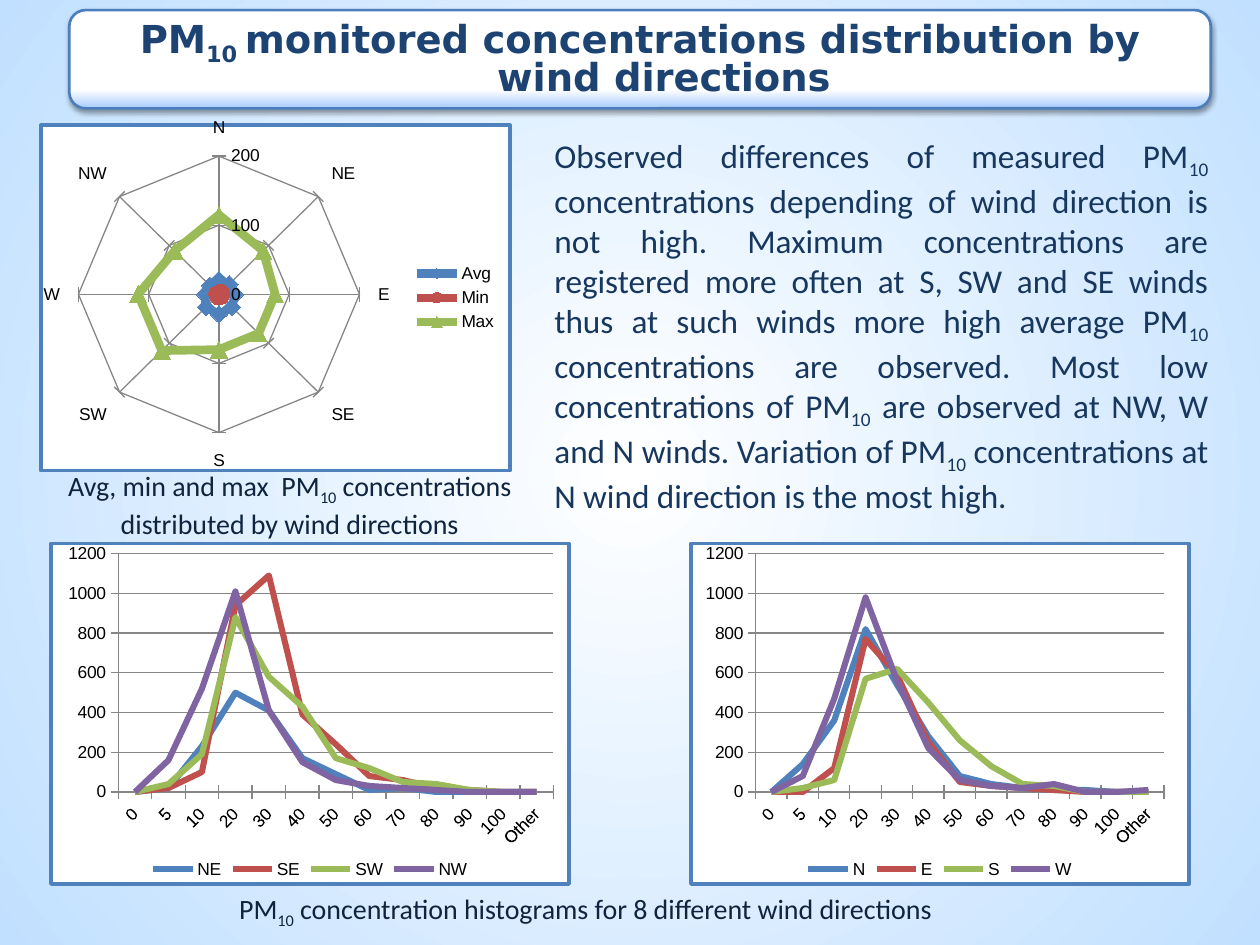
from pptx import Presentation, util as u
from pptx.chart.data import CategoryChartData
from pptx.dml.color import RGBColor
from pptx.enum import chart as ch, shapes, text
from pptx.oxml import parse_xml
from pptx.oxml.ns import nsdecls, qn

# Content: text marked True is subscript
TITLE = [("PM", False), ("10 ", True),
         ("monitored concentrations distribution by wind directions", False)]
BODY = [
    ("Observed differences of measured PM", False), ("10 ", True),
    ("concentrations depending of wind direction is not high. Maximum concentrations "
     "are registered more often at S, SW and SE winds thus at such winds more high "
     "average PM", False), ("10 ", True),
    ("concentrations are observed. Most low concentrations of PM", False), ("10", True),
    (" are observed at NW, W and N winds. Variation of PM", False), ("10", True),
    (" concentrations at N wind direction is the most high. ", False)]
RADAR_CAPTION = [("Avg, min and max  PM", False), ("10", True),
                 (" concentrations distributed by wind directions", False)]
HISTOGRAM_CAPTION = [("PM", False), ("10", True),
                     (" concentration histograms for 8 different wind directions", False)]

DIRECTIONS = ["N", "NE", "E", "SE", "S", "SW", "W", "NW"]
BINS = ["0", "5", "10", "20", "30", "40", "50", "60", "70", "80", "90", "100", "Other"]
RADAR = {
    "Avg": [21, 21, 23, 26, 29, 26, 20, 18],
    "Min": [1, 3, 3, 3, 3, 2, 2, 1],
    "Max": [115, 89, 80, 80, 80, 115, 115, 89]}
DIAGONAL_WINDS = {
    "NE": [0, 20, 230, 500, 410, 170, 90, 10, 20, 0, 0, 0, 0],
    "SE": [0, 20, 100, 940, 1090, 390, 240, 80, 60, 20, 10, 0, 0],
    "SW": [0, 40, 190, 880, 580, 430, 170, 120, 50, 40, 10, 0, 0],
    "NW": [0, 160, 520, 1010, 410, 150, 60, 30, 20, 10, 0, 0, 0]}
MAIN_WINDS = {
    "N": [0, 140, 360, 820, 540, 280, 80, 40, 20, 10, 10, 0, 0],
    "E": [0, 0, 120, 770, 590, 250, 50, 30, 20, 10, 0, 0, 0],
    "S": [0, 20, 60, 570, 620, 450, 260, 130, 40, 30, 0, 0, 0],
    "W": [0, 80, 470, 980, 560, 220, 60, 30, 20, 40, 0, 0, 10]}
SERIES_COLORS = ["4F81BD", "C0504D", "9BBB59", "8064A2"]
MARKERS = [ch.XL_MARKER_STYLE.DIAMOND, ch.XL_MARKER_STYLE.CIRCLE, ch.XL_MARKER_STYLE.TRIANGLE]

# Places in inches: left, top, width, height
TITLE_BOX = (0.55, 0.08, 9.06, 0.78)
BODY_BOX = (4.3, 1.02, 5.39, 2.98)
RADAR_BOX = (0.31, 0.94, 3.75, 2.81)
RADAR_CAPTION_BOX = (0.23, 3.67, 4.14, 0.64)
HISTOGRAM_CAPTION_BOX = (1.8, 7.03, 6.25, 0.37)
HISTOGRAM_TOP, HISTOGRAM_HEIGHT = 4.3, 2.73


def rgb(value):
    return RGBColor.from_string(value)


def inches(box):
    return [u.Inches(length) for length in box]


def set_gradient(fill, stops):
    fill.gradient()
    for stop, (position, color) in zip(fill.gradient_stops, stops):
        stop.position = position
        stop.color.rgb = rgb(color)


def write(shape, runs, size, color, align, font="Calibri", bold=False):
    frame = shape.text_frame
    frame.word_wrap = True
    frame.auto_size = text.MSO_AUTO_SIZE.NONE
    paragraph = frame.paragraphs[0]
    paragraph.alignment = align
    paragraph.space_before = u.Pt(0)
    for words, subscript in runs:
        run = paragraph.add_run()
        run.text = words
        run.font.size, run.font.name, run.font.bold = u.Pt(size), font, bold
        run.font.color.rgb = rgb(color)
        if subscript:
            run.font._element.set("baseline", "-25000")
    return paragraph


def set_indent(paragraph, left, first):
    properties = paragraph._p.get_or_add_pPr()
    properties.set("marL", str(u.Inches(left)))
    properties.set("indent", str(u.Inches(first)))
    return properties


def add_caption(slide, box, runs, align):
    write(slide.shapes.add_textbox(*inches(box)), runs, 16, "0F243E", align)


def add_chart(slide, kind, box, categories, series, plot, top, step, legend, width):
    data = CategoryChartData()
    data.categories = categories
    for name, values in series.items():
        data.add_series(name, values)
    chart = slide.shapes.add_chart(kind, *inches(box), data).chart
    chart.has_title = False
    chart.font.size, chart.font.name = u.Pt(10), "Arial"
    chart.font.color.rgb = rgb("000000")
    chart.has_legend = True
    chart.legend.position = legend
    chart.legend.include_in_layout = False

    # Axes
    value_axis, category_axis = chart.value_axis, chart.category_axis
    value_axis.minimum_scale, value_axis.maximum_scale = 0, top
    value_axis.major_unit = step
    value_axis.has_major_gridlines = True
    lines = [value_axis.major_gridlines.format.line]
    for axis in (value_axis, category_axis):
        axis.major_tick_mark = ch.XL_TICK_MARK.CROSS
        axis.minor_tick_mark = ch.XL_TICK_MARK.NONE
        axis.tick_labels.font.size = u.Pt(10)
        lines.append(axis.format.line)
    for line in lines:
        line.color.rgb, line.width = rgb("868686"), u.Pt(0.75)

    # Series
    radar = kind == ch.XL_CHART_TYPE.RADAR_MARKERS
    chart.plots[0].vary_by_categories = False
    for index, item in enumerate(chart.plots[0].series):
        color = rgb(SERIES_COLORS[index])
        item.smooth = False
        item.format.line.color.rgb, item.format.line.width = color, u.Pt(width)
        if radar:
            item.marker.style, item.marker.size = MARKERS[index], 10
            item.marker.format.fill.solid()
            item.marker.format.fill.fore_color.rgb = color
            item.marker.format.line.color.rgb = color
        else:
            item.marker.style = ch.XL_MARKER_STYLE.NONE

    # Slanted labels, plot area position, white frame with blue border
    root = chart.element
    if not radar:
        root.find(".//" + qn("c:catAx")).find(".//" + qn("a:bodyPr")).set("rot", "-2700000")
    area = root.find(".//" + qn("c:plotArea"))
    for old in area.findall(qn("c:layout")):
        area.remove(old)
    places = "".join(f'<c:{tag} val="{share}"/>' for tag, share in zip("xywh", plot))
    area.insert(0, parse_xml(
        f'<c:layout {nsdecls("c")}><c:manualLayout><c:layoutTarget val="inner"/>'
        f'<c:xMode val="edge"/><c:yMode val="edge"/>{places}</c:manualLayout></c:layout>'))
    root.find(qn("c:chart")).addnext(parse_xml(
        f'<c:spPr {nsdecls("c", "a")}><a:solidFill><a:srgbClr val="FFFFFF"/></a:solidFill>'
        f'<a:ln w="{u.Pt(2)}"><a:solidFill><a:srgbClr val="4F81BD"/></a:solidFill></a:ln>'
        '</c:spPr>'))


def main():
    presentation = Presentation()
    presentation.slide_width, presentation.slide_height = u.Inches(10), u.Inches(7.5)
    slide = presentation.slides.add_slide(presentation.slide_layouts[1])
    title, body = slide.shapes.title, slide.placeholders[1]

    # Background glow from the centre
    set_gradient(slide.background.fill, [(0, "FFFFFF"), (1, "C1E0FF")])
    linear = slide.element.find(".//" + qn("a:lin"))
    linear.getparent().replace(linear, parse_xml(
        f'<a:path {nsdecls("a")} path="circle">'
        '<a:fillToRect l="50000" t="50000" r="50000" b="50000"/></a:path>'))

    # Title plate, kept behind the title
    plate = slide.shapes.add_shape(shapes.MSO_SHAPE.ROUNDED_RECTANGLE, *inches(TITLE_BOX))
    set_gradient(plate.fill, [(0, "A7CBFF"), (0.19, "FFFFFF")])
    plate.fill.gradient_angle = 90
    plate.line.color.rgb, plate.line.width = rgb("4B7EBC"), u.Pt(1.5)
    plate.shadow.inherit = False
    plate._element.spPr.find(qn("a:effectLst")).append(parse_xml(
        f'<a:outerShdw {nsdecls("a")} blurRad="{u.Pt(3.1)}" dist="{u.Pt(1.6)}" dir="5400000" '
        'rotWithShape="0"><a:srgbClr val="000000"><a:alpha val="38000"/></a:srgbClr>'
        '</a:outerShdw>'))
    title._element.addprevious(plate._element)

    # Title and body text
    title.left, title.top, title.width, title.height = inches(TITLE_BOX)
    title.text_frame.vertical_anchor = text.MSO_ANCHOR.MIDDLE
    heading = write(title, TITLE, 22, "1C4372", text.PP_ALIGN.CENTER, "DejaVu Sans", True)
    heading.line_spacing = 0.8
    set_indent(heading, 0.38, -0.38)
    body.left, body.top, body.width, body.height = inches(BODY_BOX)
    paragraph = write(body, BODY, 19, "17375E", text.PP_ALIGN.JUSTIFY)
    set_indent(paragraph, 0, 0).append(parse_xml(f'<a:buNone {nsdecls("a")}/>'))

    # Charts and captions
    add_caption(slide, RADAR_CAPTION_BOX, RADAR_CAPTION, text.PP_ALIGN.CENTER)
    add_chart(slide, ch.XL_CHART_TYPE.RADAR_MARKERS, RADAR_BOX, DIRECTIONS, RADAR,
              (0.08, 0.09, 0.6, 0.8), 200, 100, ch.XL_LEGEND_POSITION.RIGHT, 5)
    for left, width, series, plot in [
            (0.39, 4.14, DIAGONAL_WINDS, (0.13, 0.03, 0.84, 0.7)),
            (5.47, 3.98, MAIN_WINDS, (0.13, 0.03, 0.82, 0.7))]:
        add_chart(slide, ch.XL_CHART_TYPE.LINE, (left, HISTOGRAM_TOP, width, HISTOGRAM_HEIGHT),
                  BINS, series, plot, 1200, 200, ch.XL_LEGEND_POSITION.BOTTOM, 3.5)
    add_caption(slide, HISTOGRAM_CAPTION_BOX, HISTOGRAM_CAPTION, text.PP_ALIGN.LEFT)
    presentation.save("out.pptx")


if __name__ == "__main__":
    main()
